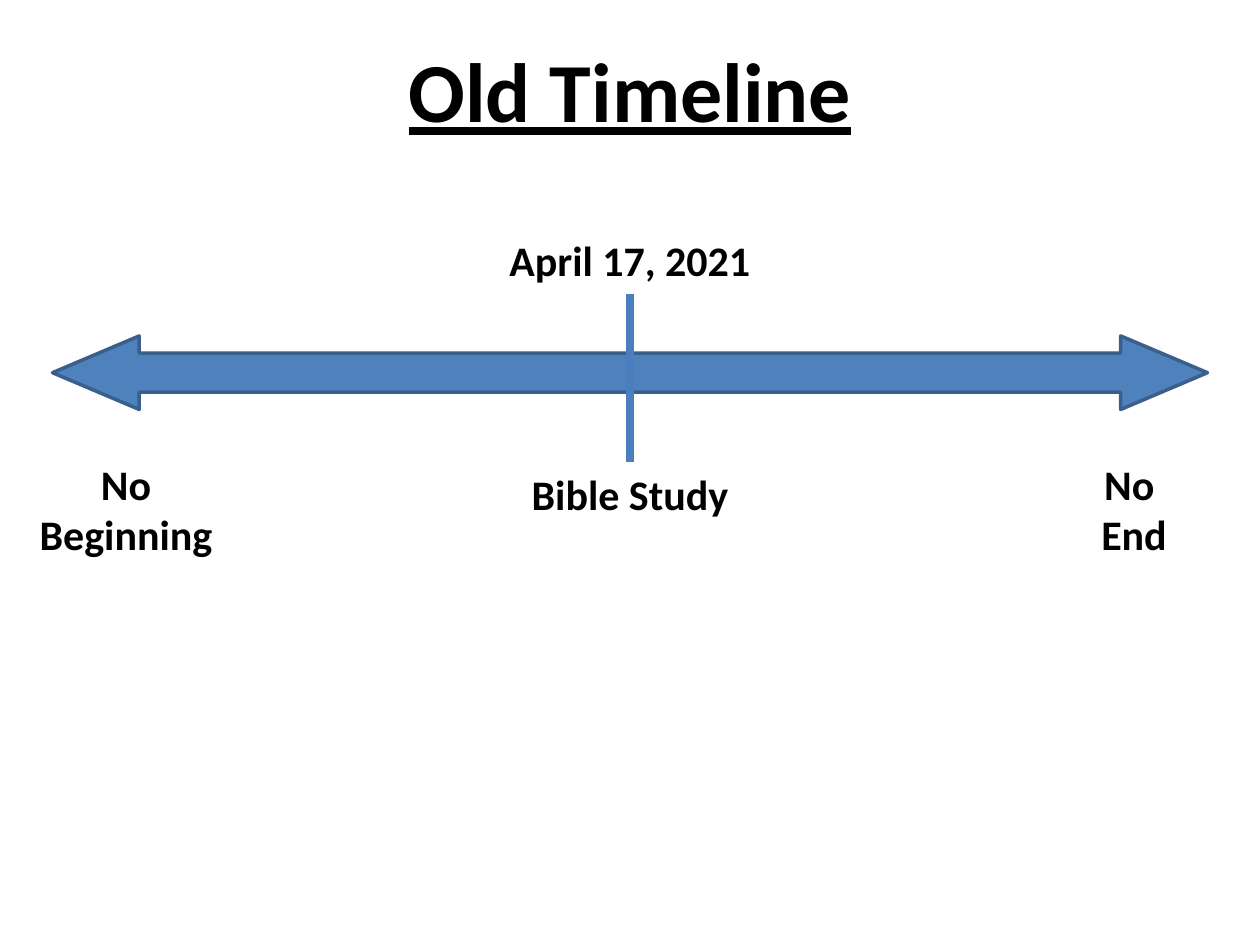
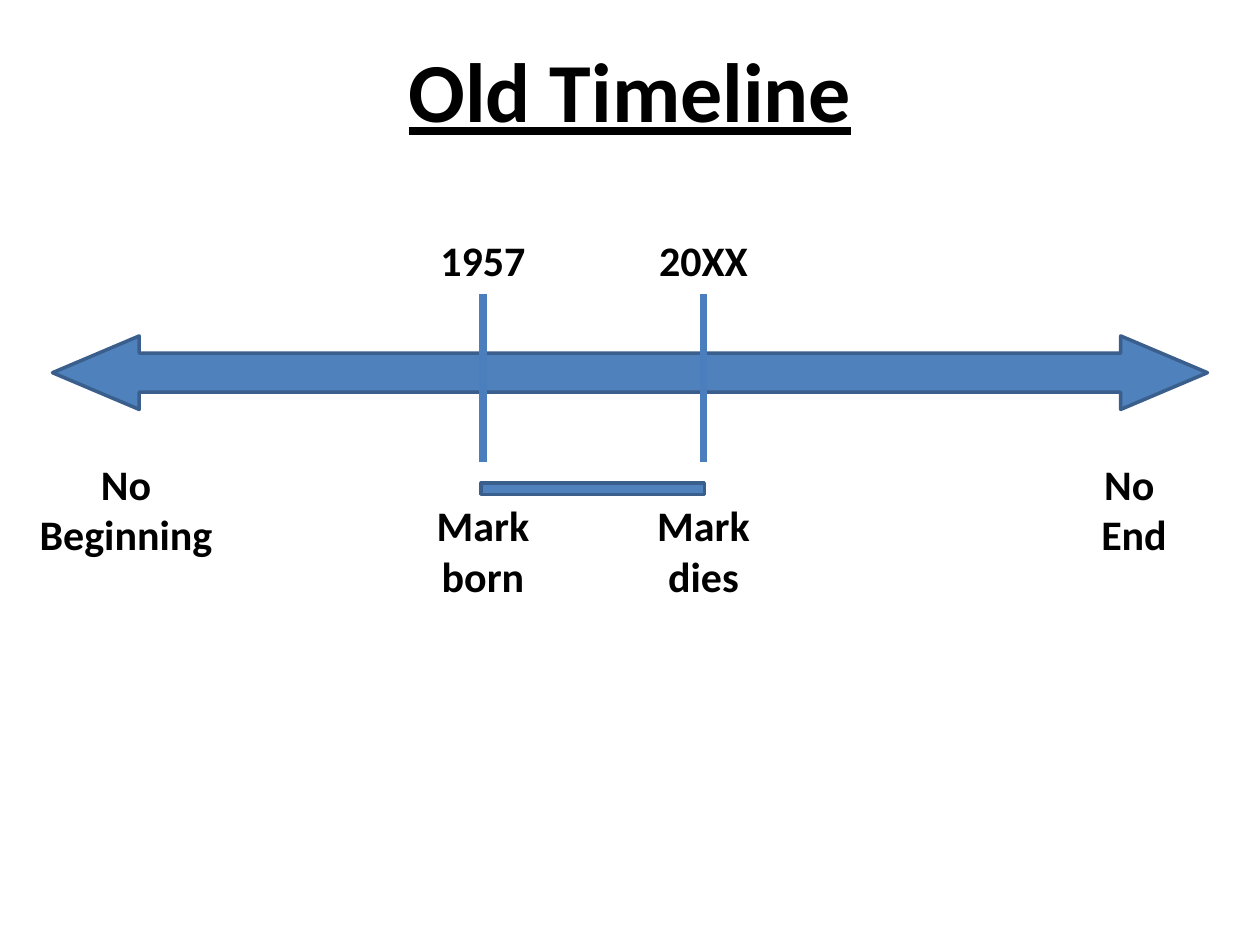
from pptx import Presentation
from pptx.dml.color import RGBColor
from pptx.enum.shapes import MSO_CONNECTOR, MSO_SHAPE
from pptx.enum.text import MSO_ANCHOR, MSO_AUTO_SIZE, PP_ALIGN
from pptx.oxml.ns import qn
from pptx.util import Pt
from lxml import etree

LINE = MSO_CONNECTOR.STRAIGHT
ARROW = MSO_SHAPE.LEFT_RIGHT_ARROW
RECT = MSO_SHAPE.RECTANGLE
GROW = MSO_AUTO_SIZE.SHAPE_TO_FIT_TEXT
MIDDLE = MSO_ANCHOR.MIDDLE
CENTER = PP_ALIGN.CENTER

COLORS = {"text": "000000", "fill": "4F81BD", "edge": "3A5F8C", "tick": "4B7EBC"}
TITLE = {"name": "Calibri", "size": Pt(48), "bold": True, "underline": True}
LABEL = {"name": "Calibri", "size": Pt(24), "bold": True}

TICK_TOP, TICK_END = 168, 264
DATE_TOP = 130.3
END_TOP, END_WIDTH = 258.5, 132
LINE_HIGH = 36

# Each mark: centre, date, date width, event lines, event top, event width
SLIDES = [
    {"marks": [(360, "April 17, 2021", 180, ["Bible Study"], 264, 132)]},
    {"marks": [(276, "1957", 84, ["Mark", "born"], 282, 84),
               (402, "20XX", 84, ["Mark", "dies"], 282, 84)],
     "span": (275, 276, 127.5, 6.5)},
]


def write(frame, lines, style):
    """Fill a text frame with one centred paragraph per line."""
    frame.text = "\n".join(lines)
    for para in frame.paragraphs:
        para.alignment = CENTER
        font = para.runs[0].font
        for key, value in style.items():
            setattr(font, key, value)
        font.color.rgb = RGBColor.from_string(COLORS["text"])


def add_bar(slide, kind, box):
    bar = slide.shapes.add_shape(kind, *map(Pt, box))
    bar.shadow.inherit = False
    bar.fill.solid()
    bar.fill.fore_color.rgb = RGBColor.from_string(COLORS["fill"])
    bar.line.color.rgb = RGBColor.from_string(COLORS["edge"])
    bar.line.width = Pt(2)
    return bar


prs = Presentation()
prs.slide_width, prs.slide_height = Pt(720), Pt(540)

for data in SLIDES:
    slide = prs.slides.add_slide(prs.slide_layouts[5])
    title = slide.shapes.title
    title.left, title.top, title.width, title.height = map(Pt, (36, 6, 648, 90))
    title.text_frame.vertical_anchor = MIDDLE
    write(title.text_frame, ["Old Timeline"], TITLE)

    arrow = add_bar(slide, ARROW, (30, 192, 660, 42))
    arrow.adjustments[0], arrow.adjustments[1] = 0.532, 1.18

    labels = [(72, END_TOP, END_WIDTH, ["No Beginning"], 2),
              (648, END_TOP, END_WIDTH, ["No ", "End"], 2)]
    for mid, date, wide, event, top, room in data["marks"]:
        tick = slide.shapes.add_connector(
            LINE, Pt(mid), Pt(TICK_TOP), Pt(mid), Pt(TICK_END))
        tick.line.color.rgb = RGBColor.from_string(COLORS["tick"])
        tick.line.width = Pt(4.5)
        etree.SubElement(tick.line._get_or_add_ln().getparent(), qn("a:effectLst"))
        labels += [(mid, DATE_TOP, wide, [date], 1),
                   (mid, top, room, event, len(event))]

    for mid, top, wide, lines, rows in labels:
        box = slide.shapes.add_textbox(
            Pt(mid - wide / 2), Pt(top), Pt(wide), Pt(LINE_HIGH + 29.4 * (rows - 1)))
        box.text_frame.word_wrap = True
        box.text_frame.auto_size = GROW
        write(box.text_frame, lines, LABEL)

    if "span" in data:
        add_bar(slide, RECT, data["span"])

prs.save("out.pptx")
